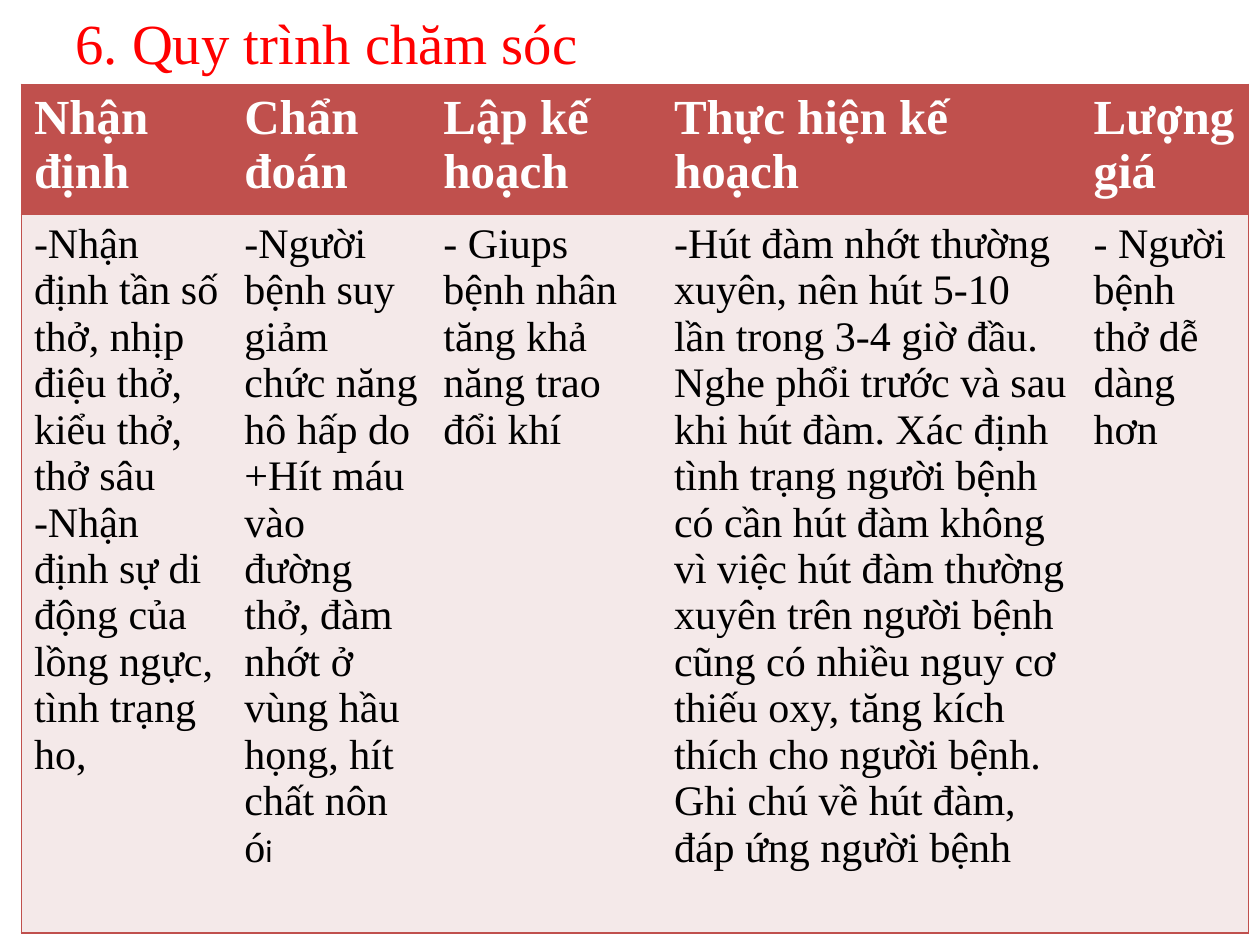
from dataclasses import dataclass

import pptx
import pptx.dml.color
import pptx.enum.text
import pptx.oxml.ns
import pptx.util
from lxml import etree

Inches = pptx.util.Inches
Pt = pptx.util.Pt
RGBColor = pptx.dml.color.RGBColor

RED = RGBColor(0xFF, 0x00, 0x00)
BRICK = RGBColor(0xC0, 0x50, 0x4D)
BLUSH = RGBColor(0xF4, 0xE9, 0xE9)
WHITE = RGBColor(0xFF, 0xFF, 0xFF)
BLACK = RGBColor(0x00, 0x00, 0x00)
SERIF = "Times New Roman"


@dataclass
class Run:
    text: str
    size: float = 24
    font: str = SERIF
    color: RGBColor = BLACK
    bold: bool = False


@dataclass
class Step:
    """One column of the care process: its heading and its paragraphs of runs."""
    heading: str
    width: float
    body: list[list[Run]]


STEPS = [
    Step("Nhận định", 1.67, [
        [Run("-Nhận định tần số thở, nhịp điệu thở, kiểu thở, thở sâu")],
        [Run("-Nhận định sự di động của lồng ngực, tình trạng ho,")],
    ]),
    Step("Chẩn đoán", 1.58, [
        [Run("-Người bệnh suy giảm chức năng hô hấp do")],
        [Run("+Hít máu vào đường thở, đàm nhớt ở vùng hầu họng, hít chất nôn ó"),
         Run("i", 18, "Calibri")],
    ]),
    Step("Lập kế hoạch", 1.83, [
        [Run("- Giups bệnh nhân tăng khả năng trao đổi khí")],
    ]),
    Step("Thực hiện kế hoạch", 3.33, [
        [Run("-Hút đàm nhớt thường xuyên, nên hút 5-10 lần trong 3-4 giờ đầu. "
             "Nghe phổi trước và sau khi hút đàm. Xác định tình trạng người bệnh "
             "có cần hút đàm không vì việc hút đàm thường xuyên trên người bệnh "
             "cũng có nhiều nguy cơ thiếu oxy, tăng kích thích cho người bệnh. "
             "Ghi chú về hút đàm, đáp ứng người bệnh")],
    ]),
    Step("Lượng giá", 1.33, [
        [Run("- Người bệnh thở dễ dàng hơn")],
    ]),
]
ROW_HEIGHTS = (0.97, 5.25)


def write(tf: pptx.text.text.TextFrame, paragraphs: list[list[Run]]) -> None:
    for i, runs in enumerate(paragraphs):
        p = tf.add_paragraph() if i else tf.paragraphs[0]
        for run in runs:
            r = p.add_run()
            r.text = run.text
            r.font.size = Pt(run.size)
            r.font.name = run.font
            r.font.bold = run.bold
            r.font.color.rgb = run.color


def set_borders(cell: pptx.table._Cell, sides: str) -> None:
    """Line the given sides (of L, R, T, B) and clear the others."""
    qn = pptx.oxml.ns.qn
    tc_pr = cell._tc.get_or_add_tcPr()
    for side in "LRTB":
        ln = etree.SubElement(tc_pr, qn(f"a:ln{side}"), w=str(Pt(1)))
        if side in sides:
            fill = etree.SubElement(ln, qn("a:solidFill"))
            etree.SubElement(fill, qn("a:srgbClr"), val=str(BRICK))
        else:
            etree.SubElement(ln, qn("a:noFill"))


def fill_cell(cell: pptx.table._Cell, paragraphs: list[list[Run]],
              color: RGBColor, sides: str) -> None:
    set_borders(cell, sides)
    cell.fill.solid()
    cell.fill.fore_color.rgb = color
    write(cell.text_frame, paragraphs)


def add_title(s: pptx.slide.Slide) -> None:
    tf = s.shapes.add_textbox(Inches(0.5), 0, Inches(9), Inches(0.67)).text_frame
    tf.word_wrap = True
    tf.vertical_anchor = pptx.enum.text.MSO_ANCHOR.MIDDLE
    write(tf, [[Run("6. Quy trình chăm sóc", 32.4, color=RED)]])


def add_process_table(s: pptx.slide.Slide) -> None:
    width = sum(step.width for step in STEPS)
    table = s.shapes.add_table(
        len(ROW_HEIGHTS), len(STEPS), Inches(0.17), Inches(0.67),
        Inches(width), Inches(sum(ROW_HEIGHTS))).table
    for row, height in zip(table.rows, ROW_HEIGHTS):
        row.height = Inches(height)
    for i, step in enumerate(STEPS):
        table.columns[i].width = Inches(step.width)
        sides = "TB" + ("L" if i == 0 else "") + ("R" if i == len(STEPS) - 1 else "")
        heading = [[Run(step.heading, 28, color=WHITE, bold=True)]]
        fill_cell(table.cell(0, i), heading, BRICK, sides)
        fill_cell(table.cell(1, i), step.body, BLUSH, sides)


def main() -> None:
    prs = pptx.Presentation()
    prs.slide_width, prs.slide_height = Inches(10), Inches(7.5)
    s = prs.slides.add_slide(prs.slide_layouts[6])
    add_title(s)
    add_process_table(s)
    prs.save("out.pptx")


if __name__ == "__main__":
    main()
